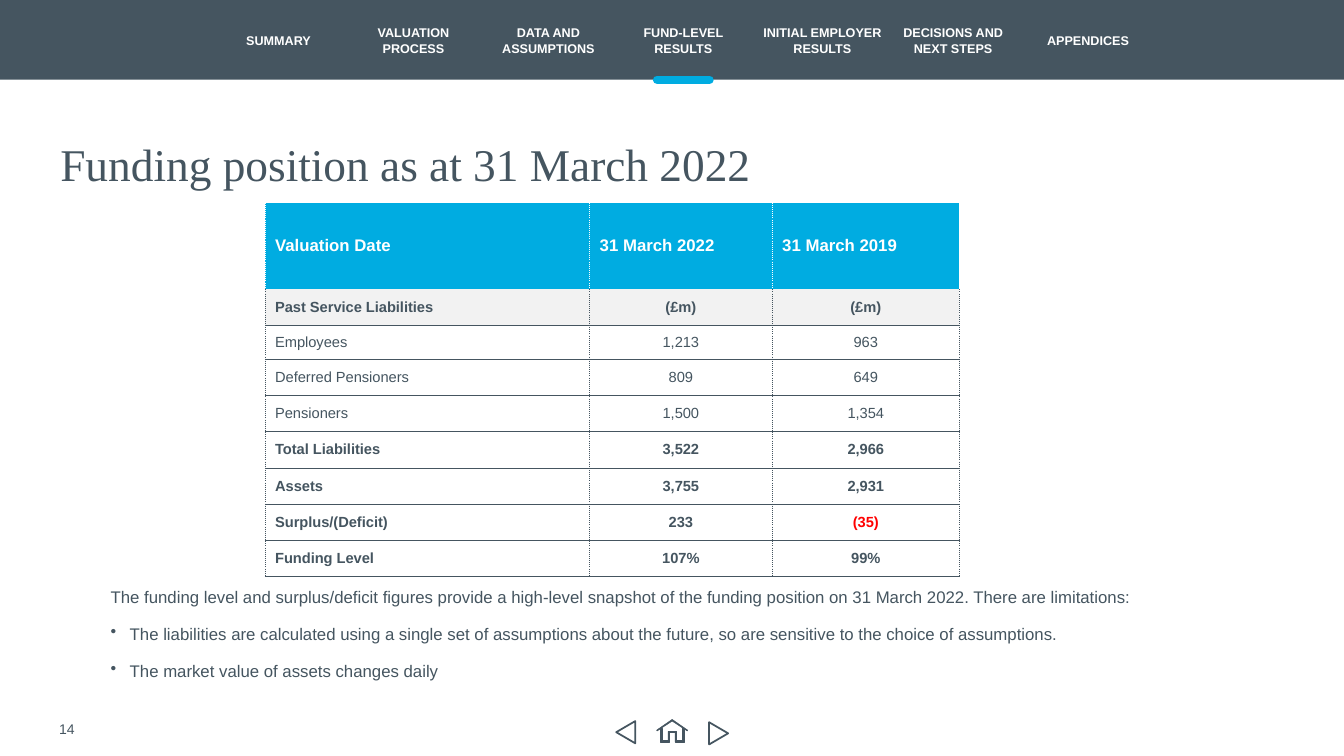
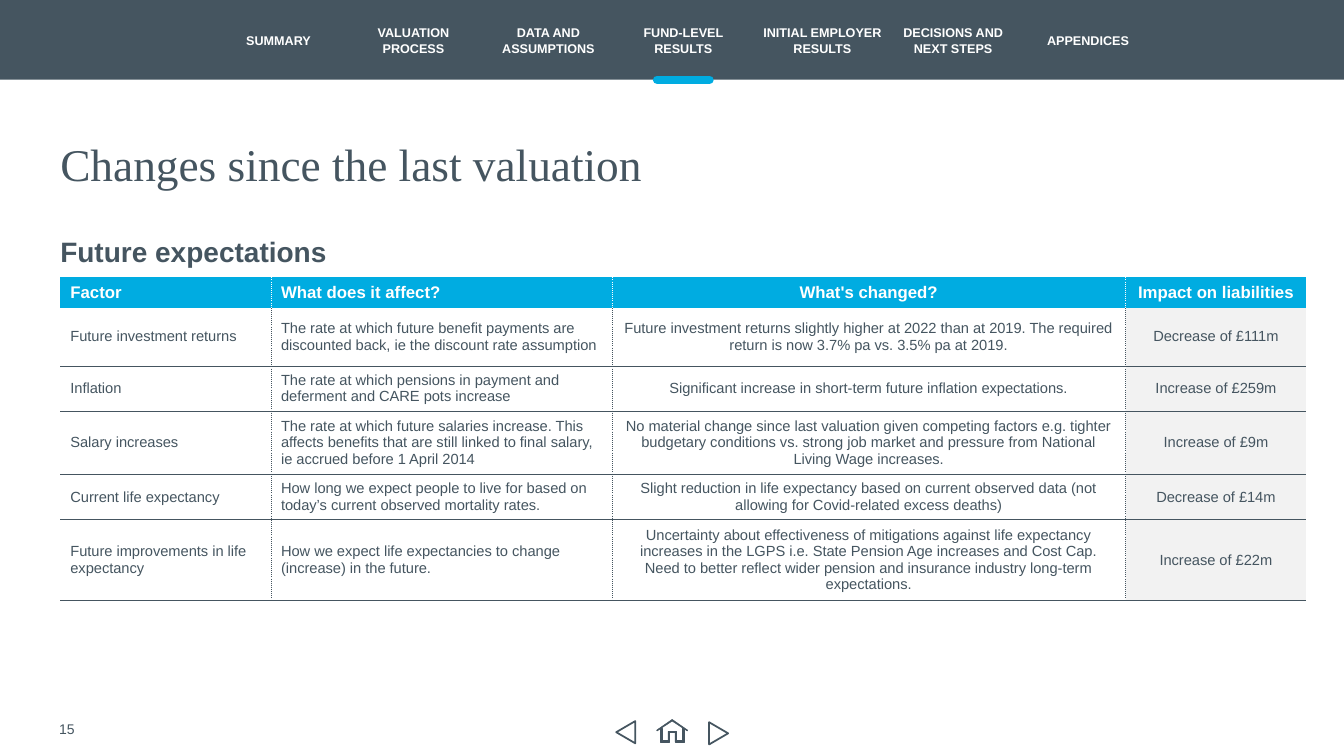
"""Build two valuation slides: the funding position and the changes since the last valuation."""
from dataclasses import dataclass
from typing import Any, Optional

import lxml.etree
import pptx
import pptx.dml.color
import pptx.enum.shapes
import pptx.enum.text
import pptx.oxml
import pptx.oxml.ns
import pptx.util

Cm = pptx.util.Cm
Pt = pptx.util.Pt
Shape = pptx.enum.shapes.MSO_SHAPE
Align = pptx.enum.text.PP_ALIGN
Anchor = pptx.enum.text.MSO_ANCHOR
qn = pptx.oxml.ns.qn

SLATE = pptx.dml.color.RGBColor(0x45, 0x55, 0x60)
BLUE = pptx.dml.color.RGBColor(0x00, 0xAC, 0xE1)
WHITE = pptx.dml.color.RGBColor(0xFF, 0xFF, 0xFF)
PALE = pptx.dml.color.RGBColor(0xF2, 0xF2, 0xF2)
RED = pptx.dml.color.RGBColor(0xFF, 0x00, 0x00)

BODY_FONT = "Arial"
TITLE_FONT = "Times New Roman"
SLIDE_WIDTH = 33.87
SLIDE_HEIGHT = 19.05
BAND_HEIGHT = 2.01
MARGIN = 1.52
SECTION_LEFT = 5.51
SECTION_PITCH = 3.4
SECTION_WIDTH = 3.02
MARKER_WIDTH = 1.32
CURRENT_SECTION = 3
PLAIN_TABLE_STYLE = "{2D5ABB26-0587-4C30-8999-92F81FD0307C}"


@dataclass(frozen=True)
class Section:
    """A label in the navigation band."""
    name: str
    width: float = SECTION_WIDTH


@dataclass(frozen=True)
class Arrow:
    """A page-turning triangle in the footer."""
    left: float
    top: float
    rotation: int


@dataclass(frozen=True)
class Grid:
    """A table with its measures in centimetres."""
    left: float
    top: float
    widths: tuple[float, ...]
    heights: tuple[float, ...]
    rows: tuple[tuple[str, ...], ...]
    aligns: tuple[Align, ...]
    header_aligns: tuple[Align, ...]
    bold_rows: tuple[int, ...] = ()
    shaded_rows: tuple[int, ...] = ()
    shaded_columns: tuple[int, ...] = ()
    framed: bool = False


SECTIONS = (
    Section("SUMMARY"),
    Section("VALUATION PROCESS"),
    Section("DATA AND ASSUMPTIONS"),
    Section("FUND-LEVEL RESULTS"),
    Section("INITIAL EMPLOYER RESULTS", 3.23),
    Section("DECISIONS AND NEXT STEPS"),
    Section("APPENDICES"),
)
ARROWS = (Arrow(15.49, 18.21, 270), Arrow(17.83, 18.24, 90))

HOME_WALLS = (
    (1725, 1870), (1701, 1870), (1701, 1846), (1687, 1846), (1687, 1870), (1664, 1870),
    (1664, 1834), (1669, 1834), (1669, 1866), (1683, 1866), (1683, 1843), (1705, 1843),
    (1705, 1866), (1720, 1866), (1720, 1834), (1725, 1834),
)
HOME_ROOF = (
    (1656, 1842), (1655, 1840), (1694, 1813), (1733, 1840), (1732, 1842), (1694, 1817),
)

FUNDING = Grid(
    left=6.68, top=5.11,
    widths=(8.18, 4.6, 4.72),
    heights=(2.18, 0.91, 0.86) + (0.91,) * 6,
    rows=(
        ("Valuation Date", "31 March 2022", "31 March 2019"),
        ("Past Service Liabilities", "(£m)", "(£m)"),
        ("Employees", "1,213", "963"),
        ("Deferred Pensioners", "809", "649"),
        ("Pensioners", "1,500", "1,354"),
        ("Total Liabilities", "3,522", "2,966"),
        ("Assets", "3,755", "2,931"),
        ("Surplus/(Deficit)", "233", "(35)"),
        ("Funding Level", "107%", "99%"),
    ),
    aligns=(Align.LEFT, Align.CENTER, Align.CENTER),
    header_aligns=(Align.LEFT,) * 3,
    bold_rows=(1, 5, 6, 7, 8),
    shaded_rows=(1,),
    framed=True,
)

EXPECTATIONS = Grid(
    left=MARGIN, top=6.99,
    widths=(5.31, 8.59, 12.95, 4.55),
    heights=(0.74, 1.47, 1.09, 1.48, 1.09, 1.88),
    rows=(
        ("Factor", "What does it affect?", "What's changed?", "Impact on liabilities"),
        ("Future investment returns",
         "The rate at which future benefit payments are discounted back, ie the discount rate assumption",
         "Future investment returns slightly higher at 2022 than at 2019. "
         "The required return is now 3.7% pa vs. 3.5% pa at 2019.",
         "Decrease of £111m"),
        ("Inflation",
         "The rate at which pensions in payment and deferment and CARE pots increase",
         "Significant increase in short-term future inflation expectations.",
         "Increase of £259m"),
        ("Salary increases",
         "The rate at which future salaries increase. This affects benefits that are still linked "
         "to final salary, ie accrued before 1 April 2014",
         "No material change since last valuation given competing factors e.g. tighter budgetary "
         "conditions vs. strong job market and pressure from National Living Wage increases.",
         "Increase of £9m"),
        ("Current life expectancy",
         "How long we expect people to live for based on today’s current observed mortality rates.",
         "Slight reduction in life expectancy based on current observed data "
         "(not allowing for Covid-related excess deaths)",
         "Decrease of £14m"),
        ("Future improvements in life expectancy",
         "How we expect life expectancies to change (increase) in the future.",
         "Uncertainty about effectiveness of mitigations against life expectancy increases in the "
         "LGPS i.e. State Pension Age increases and Cost Cap. Need to better reflect wider pension "
         "and insurance industry long-term expectations.",
         "Increase of £22m"),
    ),
    aligns=(Align.LEFT, Align.LEFT, Align.CENTER, Align.CENTER),
    header_aligns=(Align.LEFT, Align.LEFT, Align.CENTER, Align.CENTER),
    shaded_columns=(3,),
)


def write(frame: Any, *lines: str, size: float, color: Any = SLATE, font: str = BODY_FONT,
          bold: bool = False, align: Align = Align.LEFT, after: float = 0,
          line_spacing: Optional[float] = None, bullets_from: Optional[int] = None) -> None:
    """Fill a text frame with one paragraph per line."""
    for index, line in enumerate(lines):
        paragraph = frame.paragraphs[0] if index == 0 else frame.add_paragraph()
        paragraph.alignment = align
        paragraph.space_after = Pt(after)
        if line_spacing:
            paragraph.line_spacing = line_spacing
        if bullets_from is not None and index >= bullets_from:
            properties = paragraph._p.get_or_add_pPr()
            properties.set("marL", str(Cm(0.48)))
            properties.set("indent", str(-Cm(0.48)))
            lxml.etree.SubElement(properties, qn("a:buChar")).set("char", "•")
        run = paragraph.add_run()
        run.text = line
        run.font.name = font
        run.font.size = Pt(size)
        run.font.bold = bold
        run.font.color.rgb = color


def add_text(slide: Any, left: float, top: float, width: float, height: float, *lines: str,
             anchor: Anchor = Anchor.TOP, inset: float = 0, **text_format: Any) -> None:
    """Add a wrapped text box."""
    frame = slide.shapes.add_textbox(Cm(left), Cm(top), Cm(width), Cm(height)).text_frame
    frame.word_wrap = True
    frame.vertical_anchor = anchor
    frame.margin_left = frame.margin_right = Cm(inset)
    frame.margin_top = frame.margin_bottom = 0
    write(frame, *lines, **text_format)


def paint(shape: Any, fill: Any, outline: Any = None, weight: float = 0) -> None:
    """Give a shape a flat fill and an optional outline."""
    shape.shadow.inherit = False
    shape.fill.solid()
    shape.fill.fore_color.rgb = fill
    if outline is None:
        shape.line.fill.background()
    else:
        shape.line.color.rgb = outline
        shape.line.width = Pt(weight)


def add_navigation(slide: Any) -> None:
    """Draw the top band, its section labels and the current-section marker."""
    band = slide.shapes.add_shape(Shape.RECTANGLE, 0, 0, Cm(SLIDE_WIDTH), Cm(BAND_HEIGHT))
    paint(band, SLATE)
    for index, section in enumerate(SECTIONS):
        add_text(slide, SECTION_LEFT + index * SECTION_PITCH, 0.46, section.width, 1.12,
                 section.name, anchor=Anchor.MIDDLE, inset=0.1, size=9, color=WHITE,
                 bold=True, align=Align.CENTER)
    start = SECTION_LEFT + CURRENT_SECTION * SECTION_PITCH + (SECTION_WIDTH - MARKER_WIDTH) / 2
    marker = slide.shapes.add_connector(
        pptx.enum.shapes.MSO_CONNECTOR.STRAIGHT,
        Cm(start), Cm(BAND_HEIGHT), Cm(start + MARKER_WIDTH), Cm(BAND_HEIGHT))
    marker.line.color.rgb = BLUE
    marker.line.width = Pt(6)
    marker.line._get_or_add_ln().set("cap", "rnd")
    lxml.etree.SubElement(marker._element.spPr, qn("a:effectLst"))


def add_footer(slide: Any, page: int) -> None:
    """Draw the page number, the home icon and the page arrows."""
    add_text(slide, 1.24, 17.86, 5.72, 1.02, str(page), anchor=Anchor.MIDDLE, inset=0.25, size=10)
    for outline in (HOME_WALLS, HOME_ROOF):
        builder = slide.shapes.build_freeform(*outline[0], scale=Cm(1) / 100)
        builder.add_line_segments(outline[1:], close=True)
        paint(builder.convert_to_shape(), SLATE, SLATE, 0.41)
    for arrow in ARROWS:
        triangle = slide.shapes.add_shape(
            Shape.ISOSCELES_TRIANGLE, Cm(arrow.left), Cm(arrow.top), Cm(0.56), Cm(0.48))
        triangle.rotation = arrow.rotation
        paint(triangle, WHITE, SLATE, 1.25)


def add_border(cell: Any, side: str, color: Any, dash: str = "solid") -> None:
    """Append one half-point border to a cell."""
    border = lxml.etree.SubElement(cell._tc.get_or_add_tcPr(), qn(f"a:ln{side}"), w=str(Pt(0.5)))
    fill = lxml.etree.SubElement(border, qn("a:solidFill"))
    lxml.etree.SubElement(fill, qn("a:srgbClr"), val=str(color))
    lxml.etree.SubElement(border, qn("a:prstDash"), val=dash)


def add_grid(slide: Any, grid: Grid) -> None:
    """Draw a table with a blue header and dotted column rules."""
    table = slide.shapes.add_table(
        len(grid.rows), len(grid.widths), Cm(grid.left), Cm(grid.top),
        Cm(sum(grid.widths)), Cm(sum(grid.heights))).table
    table.first_row = table.horz_banding = False
    table._tbl.tblPr.find(qn("a:tableStyleId")).text = PLAIN_TABLE_STYLE
    for column, width in zip(table.columns, grid.widths):
        column.width = Cm(width)
    for row, height in zip(table.rows, grid.heights):
        row.height = Cm(height)
    last = len(grid.widths) - 1
    for r, texts in enumerate(grid.rows):
        header = r == 0
        for c, text in enumerate(texts):
            cell = table.cell(r, c)
            cell.vertical_anchor = Anchor.MIDDLE
            rule = WHITE if header else SLATE
            if grid.framed or c > 0:
                add_border(cell, "L", rule, "sysDot")
            if grid.framed or c < last:
                add_border(cell, "R", rule, "sysDot")
            if not header:
                add_border(cell, "B", SLATE)
            shaded = r in grid.shaded_rows or c in grid.shaded_columns
            cell.fill.solid()
            cell.fill.fore_color.rgb = BLUE if header else PALE if shaded else WHITE
            negative = text.startswith("(") and text[1:-1].isdigit()
            write(cell.text_frame, text, size=12 if header else 10.5,
                  color=WHITE if header else RED if negative else SLATE,
                  bold=header or r in grid.bold_rows,
                  align=(grid.header_aligns if header else grid.aligns)[c])


def add_page(deck: Any, page: int, title: str) -> Any:
    """Add a blank slide with the shared navigation, footer and title."""
    slide = deck.slides.add_slide(deck.slide_layouts[6])
    add_navigation(slide)
    add_footer(slide, page)
    add_text(slide, MARGIN, 3.56, 30.81, 1.27, title, anchor=Anchor.MIDDLE,
             size=32.4, font=TITLE_FONT, line_spacing=0.9)
    return slide


def main() -> None:
    """Build and save the deck."""
    deck = pptx.Presentation()
    deck.slide_width, deck.slide_height = Cm(SLIDE_WIDTH), Cm(SLIDE_HEIGHT)

    funding = add_page(deck, 14, "Funding position as at 31 March 2022")
    add_grid(funding, FUNDING)
    add_text(funding, 2.79, 14.78, 26.49, 3,
             "The funding level and surplus/deficit figures provide a high-level snapshot of the "
             "funding position on 31 March 2022. There are limitations:",
             "The liabilities are calculated using a single set of assumptions about the future, "
             "so are sensitive to the choice of assumptions.",
             "The market value of assets changes daily",
             size=12, after=12, bullets_from=1)

    changes = add_page(deck, 15, "Changes since the last valuation")
    add_text(changes, MARGIN, 5.92, 15.11, 1, "Future expectations", size=20, bold=True)
    add_grid(changes, EXPECTATIONS)

    deck.save("out.pptx")


if __name__ == "__main__":
    main()
